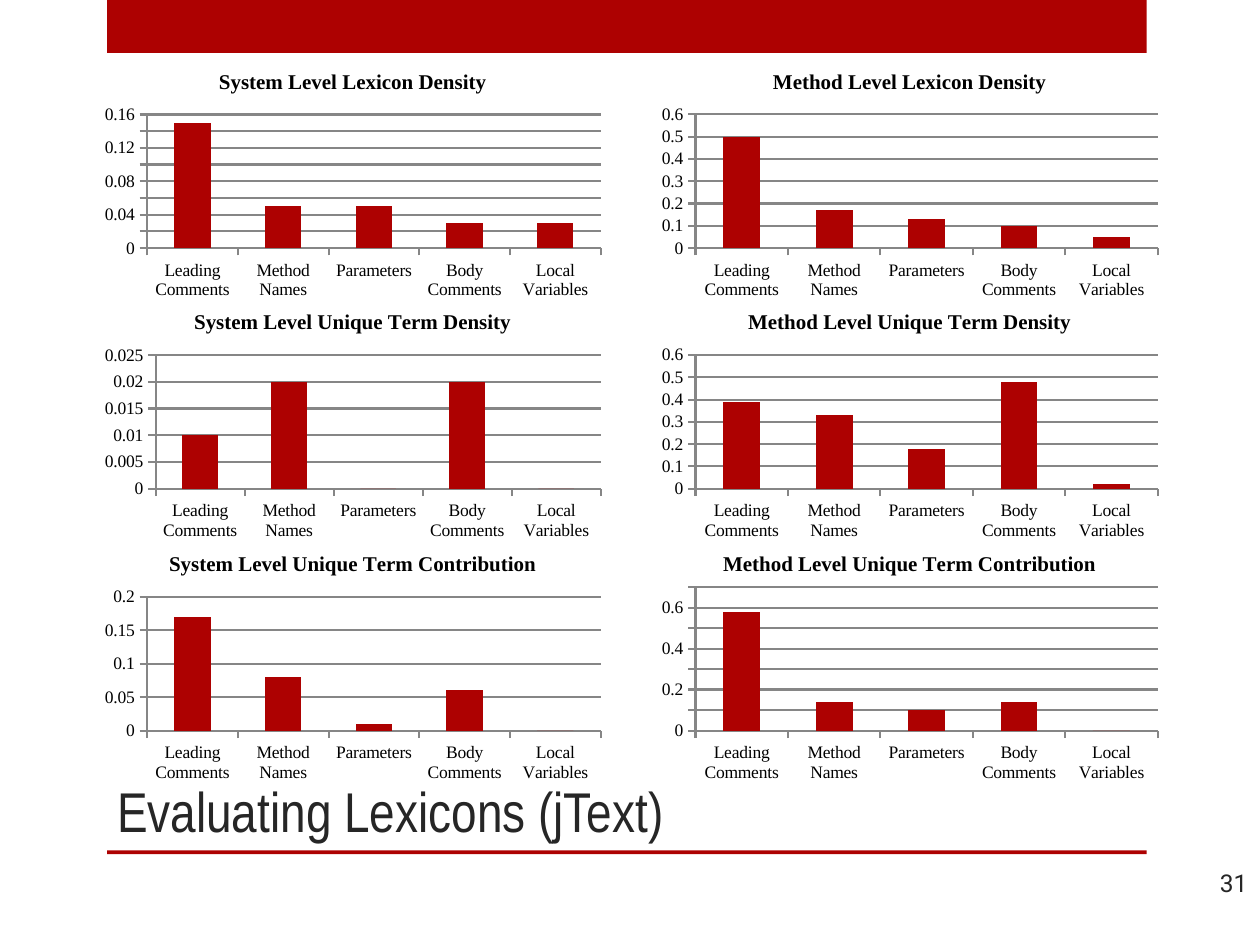
from dataclasses import dataclass

import pptx
import pptx.chart.data
import pptx.dml.color
import pptx.enum.chart
import pptx.enum.shapes
import pptx.enum.text
import pptx.util

Inches = pptx.util.Inches
Align = pptx.enum.text.PP_ALIGN
Anchor = pptx.enum.text.MSO_ANCHOR


@dataclass(frozen=True)
class Theme:
    accent: str = "AD0101"
    body: str = "262626"
    chart_text: str = "000000"
    grid: str = "868686"
    title_font: str = "Arial Narrow"
    number_font: str = "Roboto"
    chart_font: str = "Times New Roman"
    title_size: int = 32
    number_size: int = 14
    chart_title_size: int = 12
    axis_size: int = 10
    grid_width: float = 1.25


def rgb(value):
    return pptx.dml.color.RGBColor.from_string(value)


def write_text(paragraph, text, *, font, size, color, bold=False, align=None):
    run = paragraph.add_run()
    run.text = text
    run.font.name = font
    run.font.size = pptx.util.Pt(size)
    run.font.bold = bold
    run.font.color.rgb = rgb(color)
    if align is not None:
        paragraph.alignment = align


class SlideBuilder:
    def __init__(self, slide, theme):
        self.slide = slide
        self.theme = theme

    def bar(self, left, top, width, height):
        shape = self.slide.shapes.add_shape(
            pptx.enum.shapes.MSO_SHAPE.RECTANGLE,
            Inches(left), Inches(top), Inches(width), Inches(height))
        shape.shadow.inherit = False
        shape.fill.solid()
        shape.fill.fore_color.rgb = rgb(self.theme.accent)
        shape.line.fill.background()

    def title(self, text, left, top, width, height):
        shape = self.slide.shapes.title
        shape.left, shape.top = Inches(left), Inches(top)
        shape.width, shape.height = Inches(width), Inches(height)
        frame = shape.text_frame
        frame.auto_size = pptx.enum.text.MSO_AUTO_SIZE.NONE
        frame.vertical_anchor = Anchor.BOTTOM
        write_text(frame.paragraphs[0], text, font=self.theme.title_font,
                   size=self.theme.title_size, color=self.theme.body, align=Align.LEFT)

    def page_number(self, text, left, top, width, height):
        shape = self.slide.shapes.add_textbox(
            Inches(left), Inches(top), Inches(width), Inches(height))
        frame = shape.text_frame
        frame.word_wrap = True
        frame.vertical_anchor = Anchor.MIDDLE
        write_text(frame.paragraphs[0], text, font=self.theme.number_font,
                   size=self.theme.number_size, color=self.theme.body, align=Align.RIGHT)

    def axis(self, axis):
        axis.major_tick_mark = pptx.enum.chart.XL_TICK_MARK.OUTSIDE
        axis.minor_tick_mark = pptx.enum.chart.XL_TICK_MARK.NONE
        axis.tick_labels.font.size = pptx.util.Pt(self.theme.axis_size)
        self.grid_line(axis.format.line)

    def grid_line(self, line):
        line.color.rgb = rgb(self.theme.grid)
        line.width = pptx.util.Pt(self.theme.grid_width)

    def column_chart(self, title, categories, values, maximum, step,
                     left, top, width, height):
        data = pptx.chart.data.CategoryChartData()
        data.categories = categories
        data.add_series("Series 1", values)
        chart = self.slide.shapes.add_chart(
            pptx.enum.chart.XL_CHART_TYPE.COLUMN_CLUSTERED,
            Inches(left), Inches(top), Inches(width), Inches(height), data).chart
        chart.font.name = self.theme.chart_font
        chart.font.size = pptx.util.Pt(self.theme.axis_size)
        chart.font.color.rgb = rgb(self.theme.chart_text)
        chart.has_legend = False
        chart.has_title = True
        chart.chart_title.include_in_layout = False
        write_text(chart.chart_title.text_frame.paragraphs[0], title,
                   font=self.theme.chart_font, size=self.theme.chart_title_size,
                   color=self.theme.chart_text, bold=True)
        self.axis(chart.category_axis)
        value_axis = chart.value_axis
        self.axis(value_axis)
        value_axis.minimum_scale = 0
        value_axis.maximum_scale = maximum
        value_axis.major_unit = step
        value_axis.has_major_gridlines = True
        self.grid_line(value_axis.major_gridlines.format.line)
        value_axis.tick_labels.number_format = "General"
        value_axis.tick_labels.number_format_is_linked = False
        plot = chart.plots[0]
        plot.gap_width = 150
        plot.vary_by_categories = False
        series = plot.series[0]
        series.invert_if_negative = False
        series.format.fill.solid()
        series.format.fill.fore_color.rgb = rgb(self.theme.accent)


CATEGORIES = ["Leading Comments", "Method Names", "Parameters",
              "Body Comments", "Local Variables"]
MEASURES = ["Lexicon Density", "Unique Term Density", "Unique Term Contribution"]
ROW_TOPS = [0.42, 2.33, 4.25]
LEVELS = [
    ("System", 0.75, [
        ([0.15, 0.05, 0.05, 0.03, 0.03], 0.16, 0.02),
        ([0.01, 0.02, 0, 0.02, 0], 0.025, 0.005),
        ([0.17, 0.08, 0.01, 0.06, 0], 0.2, 0.05),
    ]),
    ("Method", 5.17, [
        ([0.5, 0.17, 0.13, 0.1, 0.05], 0.6, 0.1),
        ([0.39, 0.33, 0.18, 0.48, 0.02], 0.6, 0.1),
        ([0.58, 0.14, 0.1, 0.14, 0], 0.7, 0.1),
    ]),
]


def main():
    presentation = pptx.Presentation()
    presentation.slide_width = Inches(10)
    presentation.slide_height = Inches(7.5)
    slide = presentation.slides.add_slide(presentation.slide_layouts[5])
    builder = SlideBuilder(slide, Theme())
    builder.bar(0.85, 0, 8.25, 0.42)
    builder.bar(0.85, 6.75, 8.25, 0.03)
    builder.title("Evaluating Lexicons (jText)", 0.83, 5, 7.42, 1.75)
    for level, left, charts in LEVELS:
        for measure, top, (values, maximum, step) in zip(MEASURES, ROW_TOPS, charts):
            builder.column_chart(f"{level} Level {measure}", CATEGORIES, values,
                                 maximum, step, left, top, 4.1, 2)
    builder.page_number("31", 9.33, 6.78, 0.67, 0.45)
    presentation.save("out.pptx")


if __name__ == "__main__":
    main()
